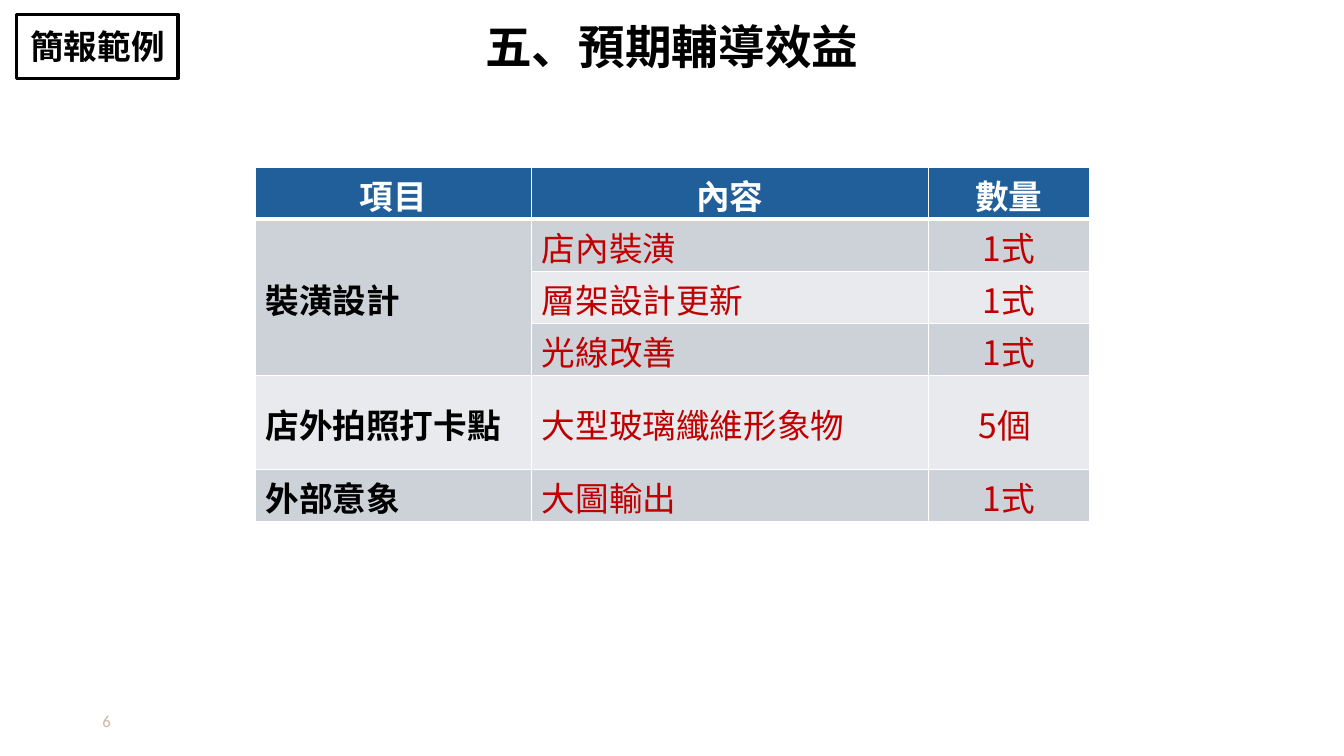
from dataclasses import dataclass

from lxml.etree import SubElement
from pptx import Presentation
from pptx.dml.color import RGBColor as Rgb
from pptx.enum.shapes import MSO_SHAPE as Shape
from pptx.enum.text import MSO_ANCHOR as Anchor, PP_ALIGN as Align
from pptx.oxml.ns import qn
from pptx.util import Inches, Pt


@dataclass(frozen=True)
class Theme:
    cjk: str = "Noto Sans CJK SC"
    latin: str = "Calibri"
    black: str = "000000"
    white: str = "FFFFFF"
    red: str = "C00000"
    blue: str = "215F9A"
    dark: str = "CCD2D8"
    light: str = "E8EAED"
    tan: str = "CDB6A5"
    title: float = 33.3
    body: float = 24
    small: float = 12


T = Theme()

# The slide is a grid of 160 columns by 90 rows
WIDE, HIGH = Inches(13.33), Inches(7.5)
COLS = (32.9, 47.2, 19.2)
ROWS = (6.2, 6.2, 6.2, 6.2, 11.2, 6.2)
HEAD = ("項目", "內容", "數量")
ITEMS = (
    ("裝潢設計", "店內裝潢", "1式"),
    ("", "層架設計更新", "1式"),
    ("", "光線改善", "1式"),
    ("店外拍照打卡點", "大型玻璃纖維形象物", "5個 "),
    ("外部意象", "大圖輸出", "1式"),
)


def col(count):
    return round(WIDE * count / 160)


def row(count):
    return round(HIGH * count / 90)


def area(left, top, width, height):
    return col(left), row(top), col(width), row(height)


def write(frame, text, size, color, bold=False, align=Align.LEFT, face=T.cjk):
    para = frame.paragraphs[0]
    para.alignment = align
    run = para.add_run()
    run.text = text
    font = run.font
    font.size, font.bold, font.name = Pt(size), bold, face
    font.color.rgb = Rgb.from_string(color)
    SubElement(font._element, qn("a:ea"), typeface=face)
    return para


def label(slide, place, *words, **style):
    frame = slide.shapes.add_textbox(*place).text_frame
    frame.word_wrap = True
    frame.vertical_anchor = Anchor.MIDDLE
    return write(frame, *words, **style)


def badge(slide, place, text):
    box = slide.shapes.add_shape(Shape.RECTANGLE, *place)
    box.shadow.inherit = False
    box.fill.background()
    box.line.color.rgb = Rgb.from_string(T.black)
    box.line.width = Pt(2.25)
    box.text_frame.vertical_anchor = Anchor.MIDDLE
    write(box.text_frame, text, T.body, T.black, True, Align.CENTER)


def edge(cell, side, width):
    props = cell._tc.get_or_add_tcPr()
    line = SubElement(props, qn(f"a:{side}"), w=str(Pt(width)))
    fill = SubElement(line, qn("a:solidFill"))
    SubElement(fill, qn("a:srgbClr"), val=T.white)


def paint(cell, color, base):
    for side, width in (("lnL", 1), ("lnR", 1), ("lnT", 1), ("lnB", base)):
        edge(cell, side, width)
    cell.fill.solid()
    cell.fill.fore_color.rgb = Rgb.from_string(color)
    # Slim margins let the tall CJK lines fit the row height
    cell.margin_top, cell.margin_bottom = Inches(0.03), 0


def grid(slide, left, top):
    place = area(left, top, sum(COLS), sum(ROWS))
    table = slide.shapes.add_table(len(ROWS), len(COLS), *place).table
    for part, count in zip(table.columns, COLS):
        part.width = col(count)
    for part, count in zip(table.rows, ROWS):
        part.height = row(count)

    # Heading row, then banded items
    for r, texts in enumerate((HEAD, *ITEMS)):
        head = r == 0
        back = T.blue if head else T.dark if r % 2 else T.light
        for c, text in enumerate(texts):
            cell = table.cell(r, c)
            paint(cell, back, 3 if head else 1)
            cell.vertical_anchor = Anchor.TOP if head else Anchor.MIDDLE
            if text:
                ink = T.white if head else T.red if c else T.black
                align = Align.CENTER if head or c == 2 else Align.LEFT
                write(cell.text_frame, text, T.body, ink, head or c == 0, align)
    table.cell(1, 0).merge(table.cell(3, 0))


def main():
    deck = Presentation()
    deck.slide_width, deck.slide_height = WIDE, HIGH
    slide = deck.slides.add_slide(deck.slide_layouts[6])

    # Badge and title
    badge(slide, area(2, 1.7, 19.2, 7.6), "簡報範例")
    title = label(slide, area(19.8, 2, 120.4, 7.7), "五、預期輔導效益",
                  T.title, T.black, bold=True, align=Align.CENTER)
    title.line_spacing = 0.9

    # Table of benefits
    grid(slide, 30.4, 19.9)

    # Page number
    label(slide, area(11, 83.4, 36, 4.8), "6", T.small, T.tan, face=T.latin)
    deck.save("out.pptx")


if __name__ == "__main__":
    main()
